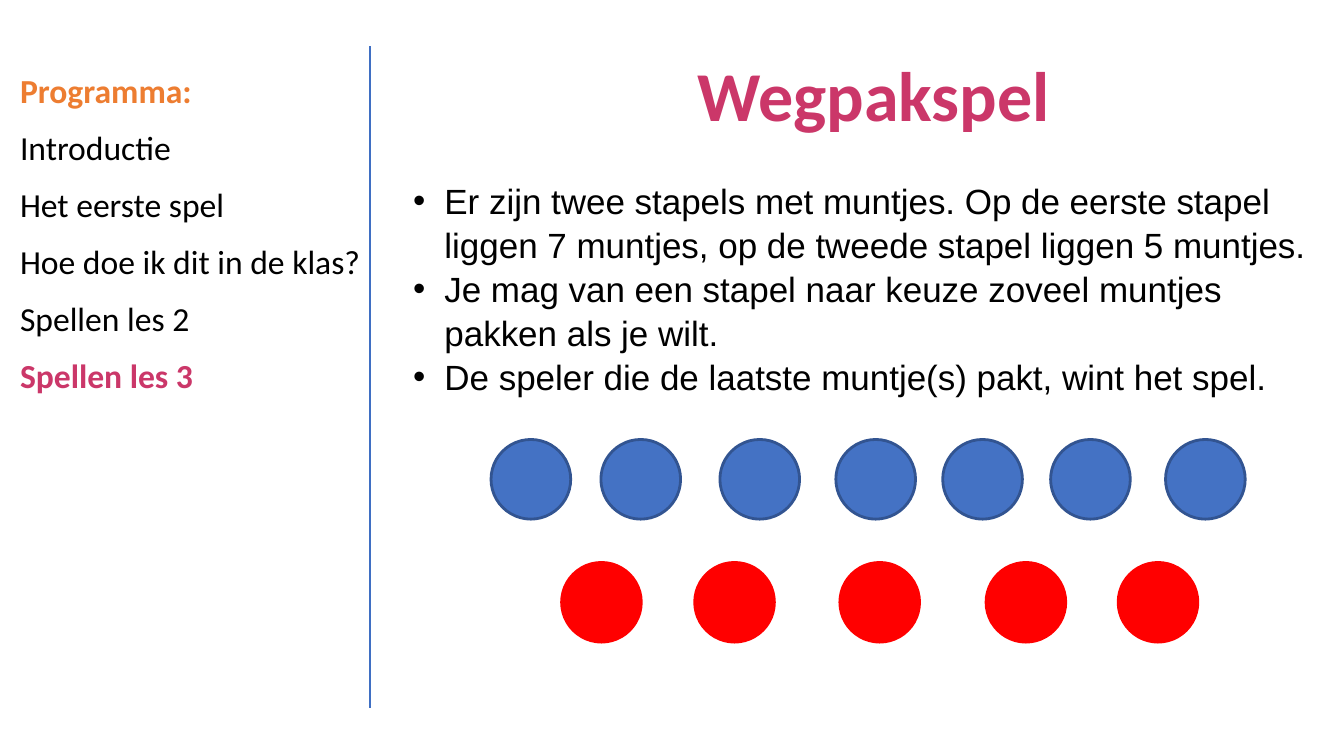
import pptx
import pptx.util
import pptx.dml.color
import pptx.enum.shapes
import pptx.enum.text
import pptx.oxml.ns
from lxml import etree
from pptx.util import Inches, Pt

RGBColor = pptx.dml.color.RGBColor
BLACK = RGBColor(0x00, 0x00, 0x00)
PINK = RGBColor(0xCB, 0x37, 0x69)
ORANGE = RGBColor(0xED, 0x7D, 0x31)
BLUE = RGBColor(0x44, 0x72, 0xC4)
DARK_BLUE = RGBColor(0x32, 0x54, 0x91)
DIVIDER_BLUE = RGBColor(0x3F, 0x6F, 0xC3)
RED = RGBColor(0xFF, 0x00, 0x00)

COIN_SIZE = 0.79
PROGRAMME = ["Introductie", "Het eerste spel", "Hoe doe ik dit in de klas?", "Spellen les 2"]
RULES = [
    "Er zijn twee stapels met muntjes. Op de eerste stapel liggen 7 muntjes, "
    "op de tweede stapel liggen 5 muntjes.",
    "Je mag van een stapel naar keuze zoveel muntjes pakken als je wilt.",
    "De speler die de laatste muntje(s) pakt, wint het spel.",
]
# Coins of each pile: left edges, top, fill, outline
PILES = [
    ([4.87, 5.96, 7.14, 8.29, 9.35, 10.42, 11.56], 4.36, BLUE, DARK_BLUE),
    ([5.57, 6.89, 8.33, 9.78, 11.09], 5.58, RED, RED),
]


class GameSlide:
    heading_font = "Calibri"
    rules_font = "Arial"

    def __init__(self, presentation):
        self.slide = presentation.slides.add_slide(presentation.slide_layouts[6])

    def text_area(self, left, top, width, height):
        frame = self.slide.shapes.add_textbox(
            Inches(left), Inches(top), Inches(width), Inches(height)).text_frame
        frame.word_wrap = True
        return frame

    def paragraph(self, frame, text, font, bullet=False, **layout):
        """Fill the empty first paragraph, or append one; layout holds paragraph formats."""
        first = not frame.text
        paragraph = frame.paragraphs[0] if first else frame.add_paragraph()
        if first:
            layout.pop("space_before", None)
        for name, value in layout.items():
            setattr(paragraph, name, value)
        if bullet:
            self.bullet(paragraph)
        run = paragraph.add_run()
        run.text = text
        color = font.pop("color")
        for name, value in font.items():
            setattr(run.font, name, value)
        run.font.color.rgb = color

    def bullet(self, paragraph):
        properties = paragraph._p.get_or_add_pPr()
        indent = Inches(0.31)
        properties.set("marL", str(indent))
        properties.set("indent", str(-indent))
        for tag, name, value in (("a:buFont", "typeface", self.rules_font),
                                 ("a:buChar", "char", "•")):
            etree.SubElement(properties, pptx.oxml.ns.qn(tag)).set(name, value)

    def divider(self, x, top, bottom):
        line = self.slide.shapes.add_connector(
            pptx.enum.shapes.MSO_CONNECTOR.STRAIGHT,
            Inches(x), Inches(top), Inches(x), Inches(bottom))
        line.line.color.rgb = DIVIDER_BLUE
        line.line.width = Pt(0.75)
        etree.SubElement(line._element.spPr, pptx.oxml.ns.qn("a:effectLst"))

    def coin(self, left, top, fill, outline):
        coin = self.slide.shapes.add_shape(
            pptx.enum.shapes.MSO_SHAPE.OVAL,
            Inches(left), Inches(top), Inches(COIN_SIZE), Inches(COIN_SIZE))
        coin.shadow.inherit = False
        coin.fill.solid()
        coin.fill.fore_color.rgb = fill
        coin.line.color.rgb = outline
        coin.line.width = Pt(2)


def main():
    presentation = pptx.Presentation()
    presentation.slide_width = Inches(13.33)
    presentation.slide_height = Inches(7.5)
    page = GameSlide(presentation)

    game = page.text_area(4, 0.42, 9.33, 6.89)
    page.paragraph(game, "Wegpakspel",
                   dict(name=page.heading_font, size=Pt(50), bold=True, color=PINK),
                   alignment=pptx.enum.text.PP_ALIGN.CENTER,
                   line_spacing=1.05, space_after=Pt(30))
    for rule in RULES:
        page.paragraph(game, rule,
                       dict(name=page.rules_font, size=Pt(25), bold=False, color=BLACK),
                       bullet=True, line_spacing=1.05)

    page.divider(3.67, 0.46, 7.02)

    programme = page.text_area(0.1, 0.64, 3.65, 5.95)
    entries = [("Programma:", ORANGE), *((item, BLACK) for item in PROGRAMME),
               ("Spellen les 3", PINK)]
    for entry, color in entries:
        page.paragraph(programme, entry,
                       dict(name=page.heading_font, size=Pt(24), bold=color != BLACK, color=color),
                       space_before=Pt(6), space_after=Pt(6))

    for lefts, top, fill, outline in PILES:
        for left in lefts:
            page.coin(left, top, fill, outline)

    presentation.save("out.pptx")


if __name__ == "__main__":
    main()
